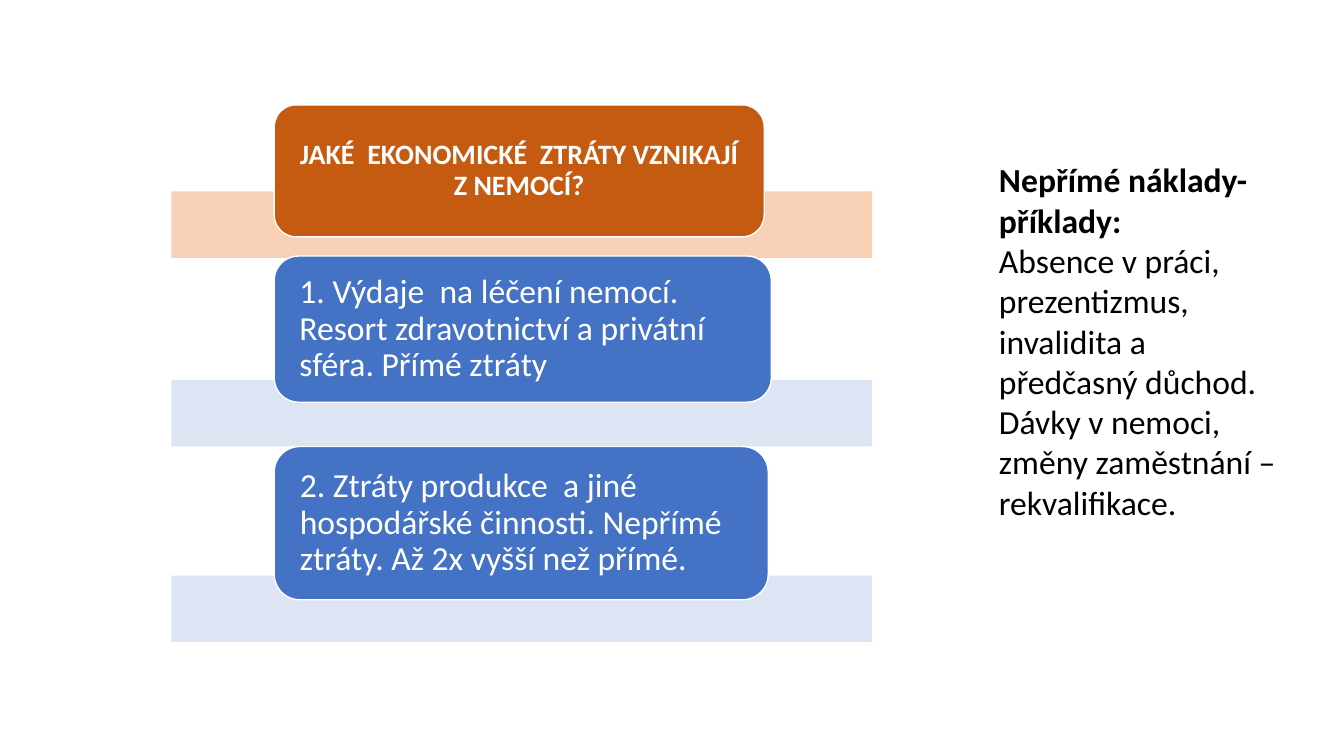
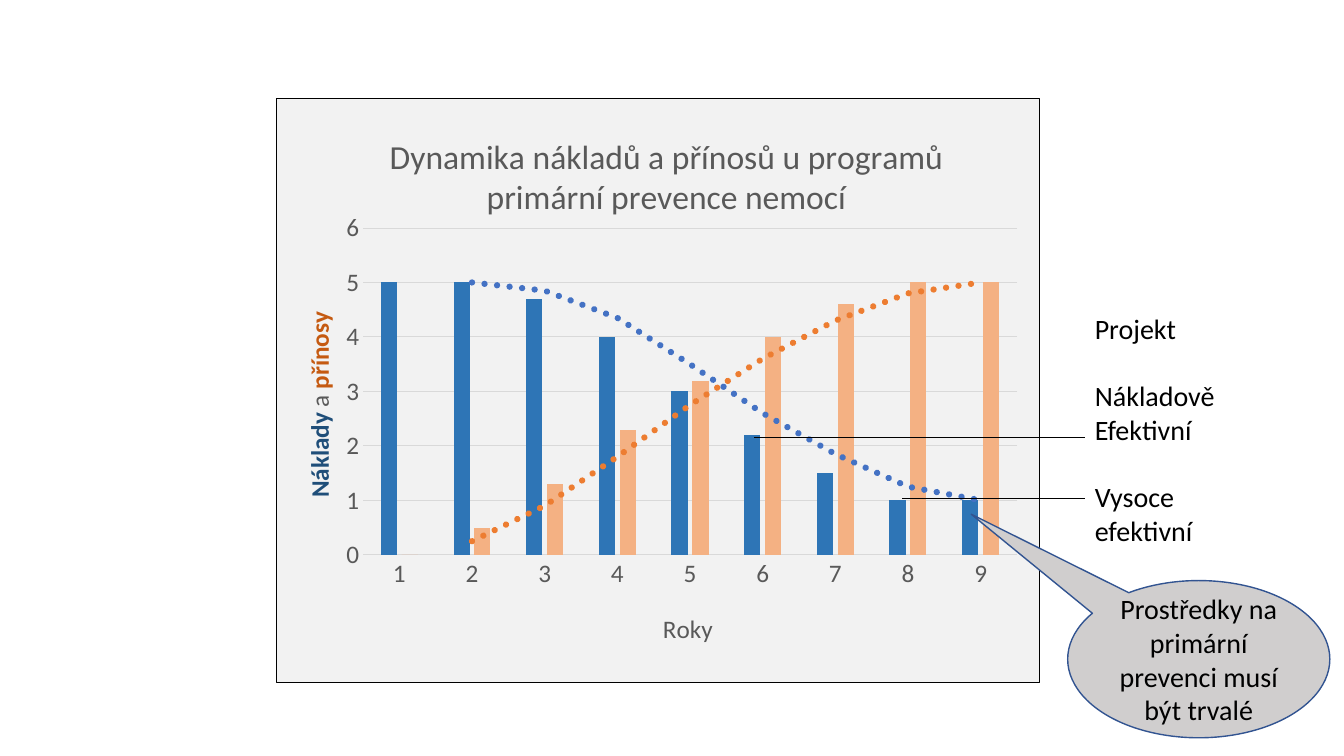
from dataclasses import dataclass

from lxml import etree
from pptx import Presentation
from pptx import util as u
from pptx.chart.data import CategoryChartData
from pptx.dml.color import RGBColor
from pptx.enum import chart as charts, shapes, text
from pptx.oxml import parse_xml
from pptx.oxml.ns import nsdecls, qn

# Shared style
PX = 9144  # EMU in one px, 100 px to the inch
FONT = "Calibri"
WHITE = RGBColor(0xFF, 0xFF, 0xFF)
BLACK = RGBColor(0, 0, 0)
GREY = RGBColor(0x59, 0x59, 0x59)
GRID = RGBColor(0xD9, 0xD9, 0xD9)
CHART_FILL = RGBColor(0xF2, 0xF2, 0xF2)
CALLOUT_FILL = RGBColor(0xD0, 0xCE, 0xCE)
CALLOUT_LINE = RGBColor(0x32, 0x54, 0x91)
BLUE = RGBColor(0x44, 0x72, 0xC4)
PALE_BLUE = RGBColor(0xDA, 0xE3, 0xF3)
BAR_BLUE = RGBColor(0x2E, 0x75, 0xB6)
NAVY = RGBColor(0x1F, 0x4E, 0x79)
ORANGE = RGBColor(0xED, 0x7D, 0x31)
DARK_ORANGE = RGBColor(0xC5, 0x5A, 0x11)
PALE_ORANGE = RGBColor(0xF8, 0xCB, 0xAD)
BAR_ORANGE = RGBColor(0xF4, 0xB1, 0x83)
CENTER, LEFT = text.PP_ALIGN.CENTER, text.PP_ALIGN.LEFT


@dataclass(frozen=True)
class Run:
    text: str
    size: int
    color: RGBColor = BLACK
    bold: bool = False


@dataclass(frozen=True)
class Para:
    runs: tuple[Run, ...]
    align: text.PP_ALIGN = LEFT
    before: int = 0
    spacing: float = 1.0


@dataclass(frozen=True)
class Box:
    left: int
    top: int
    width: int
    height: int

    def emu(self) -> tuple[int, ...]:
        return tuple(v * PX for v in (self.left, self.top, self.width, self.height))


@dataclass(frozen=True)
class Step:
    band_top: int
    band_color: RGBColor
    box: Box
    color: RGBColor
    para: Para


@dataclass(frozen=True)
class Series:
    name: str
    values: tuple[float, ...]
    color: RGBColor
    trend: RGBColor


# Drawing helpers
def write(tf, paras: list[Para]) -> None:
    for i, para in enumerate(paras):
        p = tf.paragraphs[0] if i == 0 else tf.add_paragraph()
        p.alignment = para.align
        p.line_spacing = para.spacing
        if para.before:
            p.space_before = u.Pt(para.before)
        for run in para.runs:
            r = p.add_run()
            r.text = run.text
            r.font.name = FONT
            r.font.size = u.Pt(run.size)
            r.font.bold = run.bold
            r.font.color.rgb = run.color


def add_shape(s, kind, box: Box, fill: RGBColor, line: RGBColor | None = None):
    sp = s.shapes.add_shape(kind, *box.emu())
    sp.shadow.inherit = False
    sp.fill.solid()
    sp.fill.fore_color.rgb = fill
    if line is None:
        sp.line.fill.background()
    else:
        sp.line.color.rgb = line
        sp.line.width = u.Pt(1)
    sp.text_frame.word_wrap = True
    sp.text_frame.vertical_anchor = text.MSO_ANCHOR.MIDDLE
    return sp


def add_text(s, box: Box, paras: list[Para]) -> None:
    tf = s.shapes.add_textbox(*box.emu()).text_frame
    tf.word_wrap = True
    tf.auto_size = text.MSO_AUTO_SIZE.SHAPE_TO_FIT_TEXT
    write(tf, paras)


def add_line(s, x1: int, x2: int, y: int) -> None:
    line = s.shapes.add_connector(
        shapes.MSO_CONNECTOR.STRAIGHT, x1 * PX, y * PX, x2 * PX, y * PX)
    line.line.color.rgb = BLACK
    line.line.width = u.Pt(0.5)
    etree.SubElement(line.element.spPr, qn("a:effectLst"))


def add_step(s, step: Step) -> None:
    band = add_shape(s, shapes.MSO_SHAPE.RECTANGLE, Box(170, step.band_top, 695, 66),
                     step.band_color)
    color = band.element.spPr.find(qn("a:solidFill"))[0]
    etree.SubElement(color, qn("a:alpha")).set("val", "90000")
    sp = add_shape(s, shapes.MSO_SHAPE.ROUNDED_RECTANGLE, step.box, step.color, WHITE)
    tf = sp.text_frame
    tf.margin_left = tf.margin_right = 18 * PX
    tf.margin_top = tf.margin_bottom = 0
    write(tf, [step.para])


# Chart helpers
def layout_xml(x: float, y: float, size: tuple[float, float] | None = None):
    target = '<c:layoutTarget val="inner"/>' if size else ""
    extent = f'<c:w val="{size[0]}"/><c:h val="{size[1]}"/>' if size else ""
    return parse_xml(
        f'<c:layout {nsdecls("c")}><c:manualLayout>{target}<c:xMode val="edge"/>'
        f'<c:yMode val="edge"/><c:x val="{x}"/><c:y val="{y}"/>{extent}'
        '</c:manualLayout></c:layout>')


def set_title(title, para: Para, x: float, y: float) -> None:
    write(title.text_frame, [para])
    for old in title.element.findall(qn("c:layout")):
        title.element.remove(old)
    title.element.find(qn("c:tx")).addnext(layout_xml(x, y))


def trend_xml(color: RGBColor):
    return parse_xml(
        f'<c:trendline {nsdecls("c", "a")}><c:spPr><a:ln w="{u.Pt(4.5)}" cap="rnd">'
        f'<a:solidFill><a:srgbClr val="{color}"/></a:solidFill><a:prstDash val="sysDot"/>'
        '</a:ln></c:spPr><c:trendlineType val="movingAvg"/><c:period val="2"/>'
        '<c:dispRSqr val="0"/><c:dispEq val="0"/></c:trendline>')


def style_axis(axis) -> None:
    axis.major_tick_mark = axis.minor_tick_mark = charts.XL_TICK_MARK.NONE
    font = axis.tick_labels.font
    font.name, font.size = FONT, u.Pt(18)
    font.color.rgb = GREY


def add_trend_chart(s, box: Box, rows: list[Series]) -> None:
    data = CategoryChartData()
    data.categories = [str(year) for year in range(1, 10)]
    for row in rows:
        data.add_series(row.name, row.values)
    chart = s.shapes.add_chart(
        charts.XL_CHART_TYPE.COLUMN_CLUSTERED, *box.emu(), data).chart
    chart.has_legend = False
    chart.font.name, chart.font.size = FONT, u.Pt(10)

    # Columns and moving averages
    plot = chart.plots[0]
    plot.vary_by_categories = False
    plot.gap_width, plot.overlap = 219, -27
    for row, series, ser in zip(rows, plot.series, chart.element.iter(qn("c:ser"))):
        series.format.fill.solid()
        series.format.fill.fore_color.rgb = row.color
        ser.find(qn("c:cat")).addprevious(trend_xml(row.trend))

    # Axes
    years, values = chart.category_axis, chart.value_axis
    style_axis(years)
    style_axis(values)
    years.format.line.color.rgb = GRID
    years.format.line.width = u.Pt(0.75)
    values.format.line.fill.background()
    values.minimum_scale, values.maximum_scale, values.major_unit = 0, 6, 1
    values.major_gridlines.format.line.color.rgb = GRID
    values.major_gridlines.format.line.width = u.Pt(0.75)

    # Titles
    set_title(chart.chart_title, Para((Run(
        "Dynamika nákladů a přínosů u programů primární prevence nemocí", 24, GREY),),
        CENTER), 0.14, 0.05)
    set_title(years.axis_title, Para((Run("Roky", 18, GREY),), CENTER), 0.5, 0.87)
    set_title(values.axis_title, Para((
        Run("Náklady", 18, NAVY, True), Run(" a ", 18, GREY),
        Run("přínosy", 18, DARK_ORANGE, True)), CENTER), 0.03, 0.36)
    body = values.axis_title.element.find(".//" + qn("a:bodyPr"))
    body.set("rot", "-5400000")
    body.set("vert", "horz")

    # Plot area and frame
    area = chart.element.find(".//" + qn("c:plotArea"))
    for old in area.findall(qn("c:layout")):
        area.remove(old)
    area.insert(0, layout_xml(0.113, 0.222, (0.857, 0.559)))
    chart.element.find(qn("c:chart")).addnext(parse_xml(
        f'<c:spPr {nsdecls("c", "a")}><a:solidFill><a:srgbClr val="{CHART_FILL}"/>'
        f'</a:solidFill><a:ln w="{u.Pt(0.75)}"><a:solidFill><a:srgbClr val="{BLACK}"/>'
        '</a:solidFill></a:ln></c:spPr>'))


# Slides
def losses_slide(s) -> None:
    steps = [
        Step(190, PALE_ORANGE, Box(272, 104, 486, 131), DARK_ORANGE, Para((Run(
            "JAKÉ  EKONOMICKÉ  ZTRÁTY VZNIKAJÍ Z NEMOCÍ?", 20, WHITE, True),),
            CENTER, spacing=0.9)),
        Step(377, PALE_BLUE, Box(272, 254, 493, 145), BLUE, Para((Run(
            "1. Výdaje  na léčení nemocí. Resort zdravotnictví a privátní sféra. "
            "Přímé ztráty", 24, WHITE),), spacing=0.9)),
        Step(571, PALE_BLUE, Box(272, 443, 490, 152), BLUE, Para((Run(
            "2. Ztráty produkce  a jiné hospodářské činnosti. Nepřímé ztráty. "
            "Až 2x vyšší než přímé.", 24, WHITE),), spacing=0.9)),
    ]
    for step in steps:
        add_step(s, step)
    add_text(s, Box(981, 153, 304, 414), [
        Para((Run("Nepřímé náklady-příklady:", 24, bold=True),)),
        Para((Run("Absence v práci, prezentizmus, invalidita a předčasný důchod.", 24),)),
        Para((Run("Dávky v nemoci, změny zaměstnání – rekvalifikace.", 24),)),
    ])


def dynamics_slide(s) -> None:
    add_trend_chart(s, Box(274, 97, 758, 581), [
        Series("Series 1", (5, 5, 4.7, 4, 3, 2.2, 1.5, 1, 1), BAR_BLUE, BLUE),
        Series("Series 2", (0, 0.5, 1.3, 2.3, 3.2, 4, 4.6, 5, 5), BAR_ORANGE, ORANGE),
    ])
    labels = [("Projekt", 0), ("Nákladově", 24), ("Efektivní", 0),
              ("Vysoce", 24), ("efektivní", 0)]
    add_text(s, Box(1076, 304, 190, 246),
             [Para((Run(label, 20),), before=gap) for label, gap in labels])
    add_line(s, 748, 1076, 434)
    add_line(s, 895, 1076, 494)
    callout = add_shape(s, shapes.MSO_SHAPE.OVAL_CALLOUT, Box(1059, 576, 260, 156),
                        CALLOUT_FILL, CALLOUT_LINE)
    callout.adjustments[0], callout.adjustments[1] = -0.868, -0.922
    write(callout.text_frame, [Para((Run(
        "Prostředky na primární prevenci musí být trvalé", 20),), CENTER)])


def main() -> None:
    prs = Presentation()
    prs.slide_width, prs.slide_height = 1333 * PX, 750 * PX
    blank = prs.slide_layouts[6]
    for build in (losses_slide, dynamics_slide):
        build(prs.slides.add_slide(blank))
    prs.save("out.pptx")


if __name__ == "__main__":
    main()
